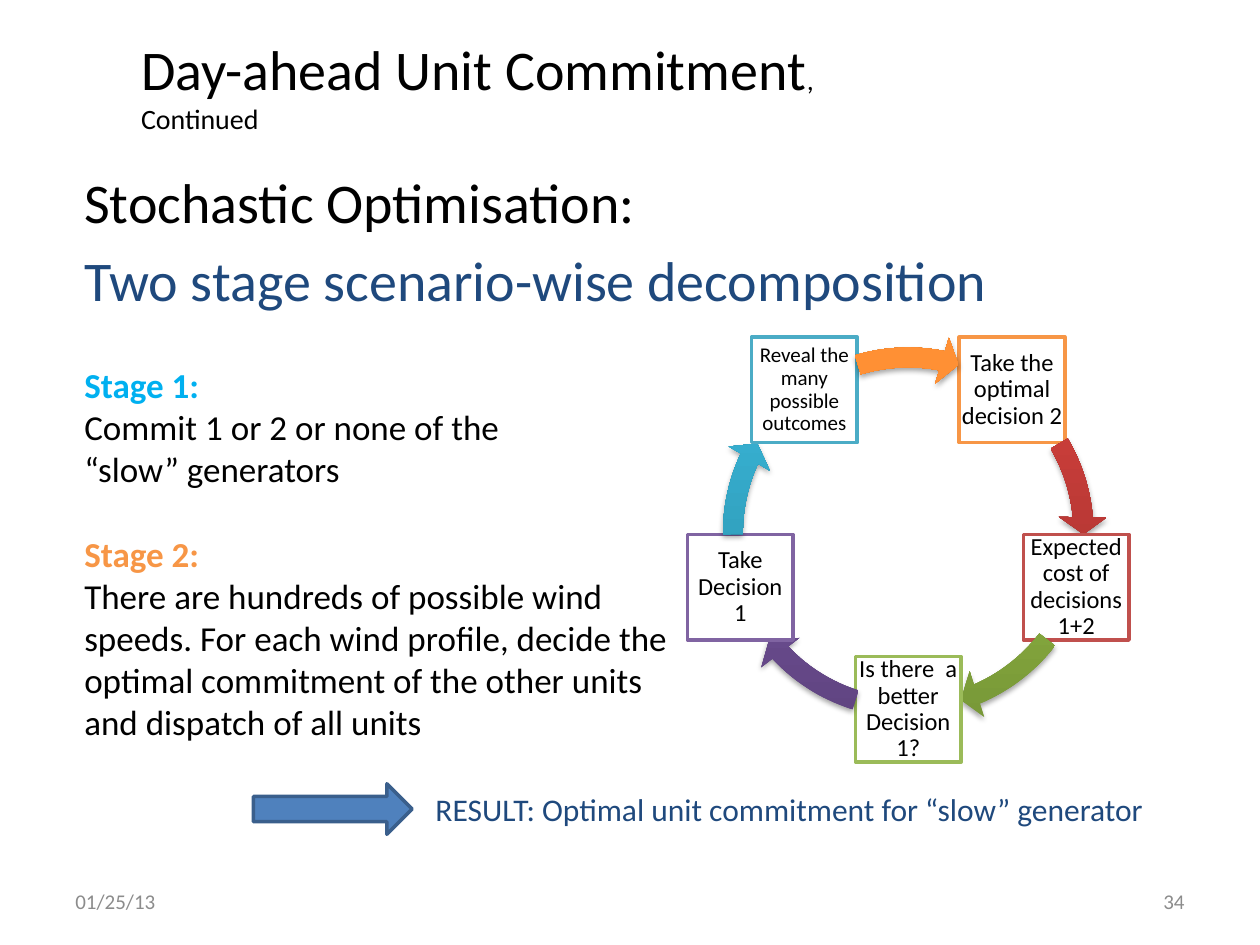
from copy import deepcopy
from dataclasses import dataclass
from math import cos, radians, sin

from lxml.etree import SubElement
from pptx import Presentation
from pptx.dml.color import RGBColor
from pptx.enum.shapes import MSO_SHAPE as Kind
from pptx.enum.text import MSO_ANCHOR as Anchor, PP_ALIGN as Align
from pptx.oxml.ns import qn
from pptx.util import Cm, Pt

FONT = "Calibri"
BLACK, NAVY, GREY = "000000", "1F497D", "8C8C8C"
MID_X, MID_Y, RADIUS, SIDE = 18.31, 10.74, 3.56, 2.13
RING = 8.03


@dataclass
class Step:
    text: str
    size: int
    line: str
    fade: tuple[str, str, str]
    head: float
    tail: float


@dataclass
class Line:
    text: str
    size: float
    color: str = BLACK
    bold: bool = False
    before: float = 0


STEPS = [
    Step("Take the optimal decision 2", 14, "F79646",
         ("CC6E20", "FF9034", "FF9136"), 168.67, 151.98),
    Step("Expected cost of decisions 1+2", 14, "C0504D",
         ("9C2F2D", "CB3E3A", "CE3B37"), 212.94, 197.66),
    Step("Is there  a better Decision 1?", 14, "9BBB59",
         ("779737", "9BC348", "9DC746"), 40.16, 22.53),
    Step("Take Decision 1", 14, "8064A2",
         ("5F4480", "7B58A6", "7C57A8"), 82.12, 64.49),
    Step("Reveal the many possible outcomes", 12, "4BACC6",
         ("2A88A2", "37B1D2", "34B4D6"), 122.99, 107.7),
]

HEADS = [
    Line("Stochastic Optimisation:", 32),
    Line("Two stage scenario-wise decomposition", 32, NAVY, before=6.4),
]

STAGES = [
    Line("Stage 1:", 20, "00B0F0", True),
    Line("Commit 1 or 2 or none of the", 20),
    Line("“slow” generators", 20),
    Line("Stage 2:", 20, "F79646", True, 24.4),
    Line("There are hundreds of possible wind speeds. "
         "For each wind profile, decide the", 20),
    Line("optimal commitment of the other units and dispatch of all units", 20),
]


def rgb(code: str) -> RGBColor:
    return RGBColor.from_string(code)


def style(font, size: float, color: str, bold: bool = False) -> None:
    font.name = FONT
    font.size = Pt(size)
    font.bold = bold
    font.color.rgb = rgb(color)


def add_text(slide, box: tuple, lines: list[Line], align=Align.LEFT,
             anchor=Anchor.TOP) -> None:
    frame = slide.shapes.add_textbox(*map(Cm, box)).text_frame
    frame.word_wrap = True
    frame.vertical_anchor = anchor
    frame.text = "\n".join(line.text for line in lines)
    for para, line in zip(frame.paragraphs, lines):
        para.alignment = align
        if line.before:
            para.space_before = Pt(line.before)
        style(para.runs[0].font, line.size, line.color, line.bold)


def add_shape(slide, kind, box: tuple, fill: str, line: str):
    shape = slide.shapes.add_shape(kind, *map(Cm, box))
    shape.shadow.inherit = False
    shape.fill.solid()
    shape.fill.fore_color.rgb = rgb(fill)
    shape.line.color.rgb = rgb(line)
    shape.line.width = Pt(2)
    return shape


def add_step(slide, step: Step, turn: float) -> None:
    left = MID_X + RADIUS * cos(radians(turn)) - SIDE / 2
    top = MID_Y + RADIUS * sin(radians(turn)) - SIDE / 2
    shape = add_shape(slide, Kind.RECTANGLE, (left, top, SIDE, SIDE),
                      "FFFFFF", step.line)
    frame = shape.text_frame
    frame.word_wrap = True
    frame.vertical_anchor = Anchor.MIDDLE
    frame.margin_left = frame.margin_right = Cm(0.05)
    frame.margin_top = frame.margin_bottom = Cm(0.05)
    frame.text = step.text
    para = frame.paragraphs[0]
    para.alignment = Align.CENTER
    para.line_spacing = 0.9
    style(para.runs[0].font, step.size, BLACK)


def add_arc(slide, step: Step) -> None:
    box = (MID_X - RING / 2, MID_Y - RING / 2, RING, RING)
    arc = add_shape(slide, Kind.CIRCULAR_ARROW, box, step.fade[0], step.line)
    arc.line.fill.background()
    for i, value in enumerate((0.05, 3.36, step.head, step.tail, 0.06)):
        arc.adjustments[i] = value
    arc.fill.gradient()
    arc.fill.gradient_angle = 90
    props = arc._element.spPr
    stops = props.find(qn("a:gradFill")).find(qn("a:gsLst"))
    stops.append(deepcopy(stops[-1]))
    for stop, color, place in zip(arc.fill.gradient_stops, step.fade, (0, 0.8, 1)):
        stop.color.rgb = rgb(color)
        stop.position = place
    shade = SubElement(props.find(qn("a:effectLst")), qn("a:outerShdw"),
                       blurRad=str(Pt(3.1)), dist=str(Pt(1.8)),
                       dir="5400000", rotWithShape="0")
    tint = SubElement(shade, qn("a:srgbClr"), val=BLACK)
    SubElement(tint, qn("a:alpha"), val="35000")


def add_title(slide) -> None:
    title = slide.shapes.title
    title.left, title.top, title.width, title.height = map(
        Cm, (2.59, 0.51, 15.44, 2.41))
    frame = title.text_frame
    frame.vertical_anchor = Anchor.MIDDLE
    para = frame.paragraphs[0]
    para.text = "Day-ahead Unit Commitment"
    para.alignment = Align.LEFT
    para.add_run().text = ", Continued"
    for run, size in zip(para.runs, (32, 16)):
        style(run.font, size, BLACK)


def main() -> None:
    deck = Presentation()
    deck.slide_width, deck.slide_height = Cm(25.4), Cm(19.05)
    slide = deck.slides.add_slide(deck.slide_layouts[5])
    add_title(slide)
    add_text(slide, (1.45, 3.25, 22.86, 12.57), HEADS)
    for i, step in enumerate(STEPS):
        add_step(slide, step, 72 * i - 54)
        add_arc(slide, STEPS[(i + 1) % len(STEPS)])
    add_text(slide, (1.45, 7.21, 12.8, 7.95), STAGES)
    add_text(slide, (8.53, 15.8, 14.94, 1.02),
             [Line("RESULT: Optimal unit commitment for “slow” generator", 18, NAVY)])
    add_shape(slide, Kind.RIGHT_ARROW, (5.11, 15.8, 3.2, 1.02), "4F81BD", "3A5F8C")
    for text, left, align in (("01/25/13", 1.27, Align.LEFT),
                              ("34", 18.21, Align.RIGHT)):
        add_text(slide, (left, 17.65, 5.92, 1.02), [Line(text, 12, GREY)],
                 align, Anchor.MIDDLE)
    deck.save("out.pptx")


if __name__ == "__main__":
    main()
